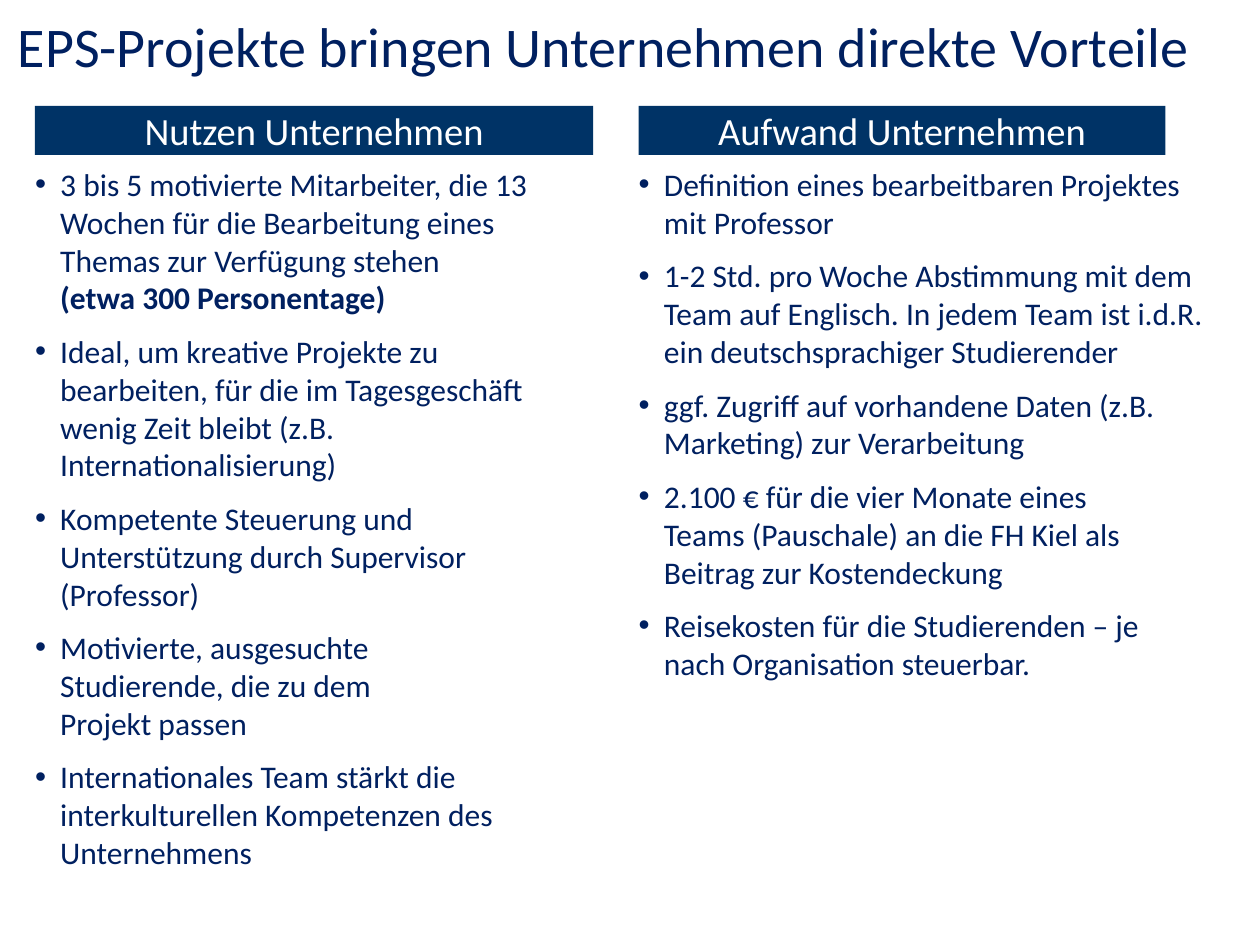
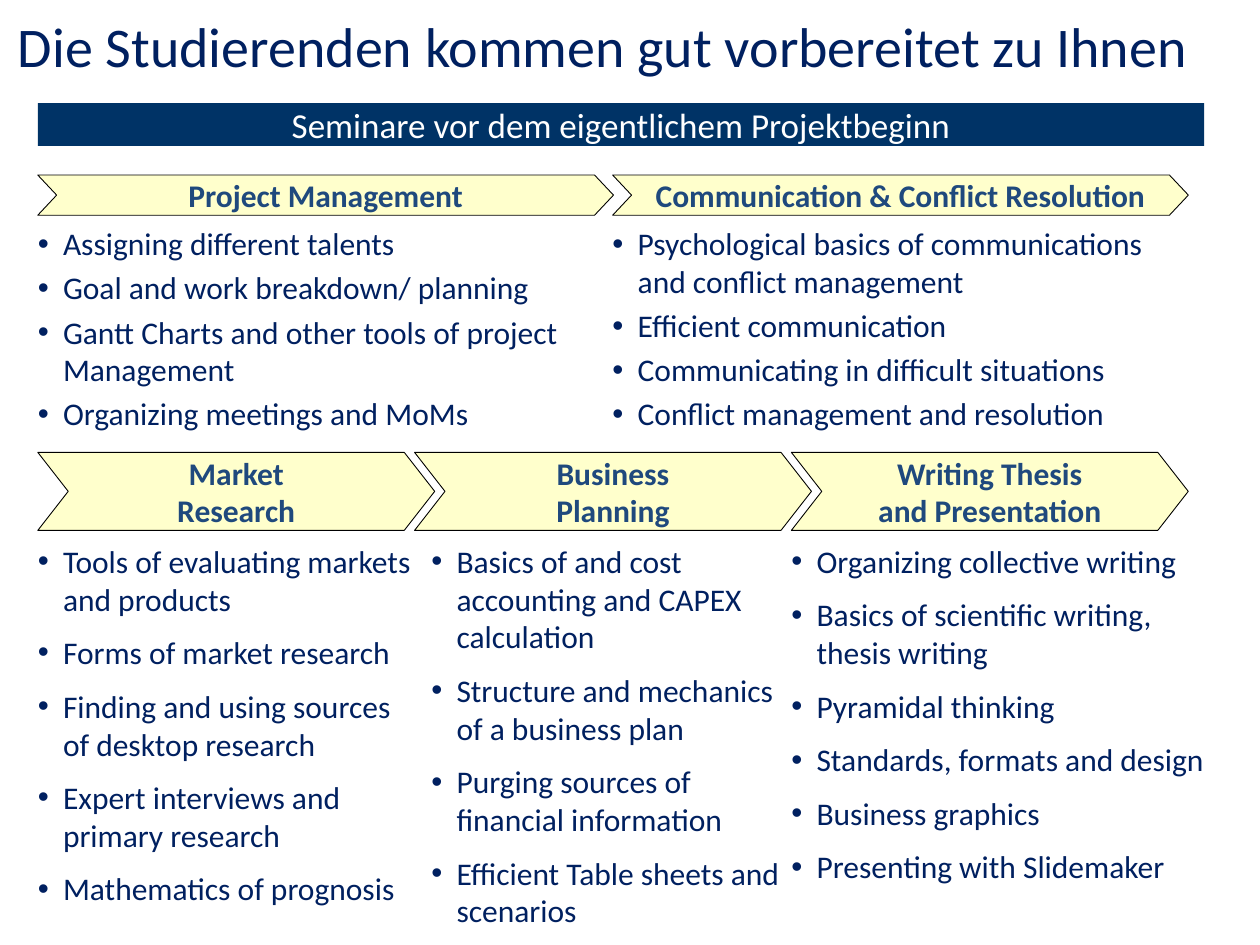
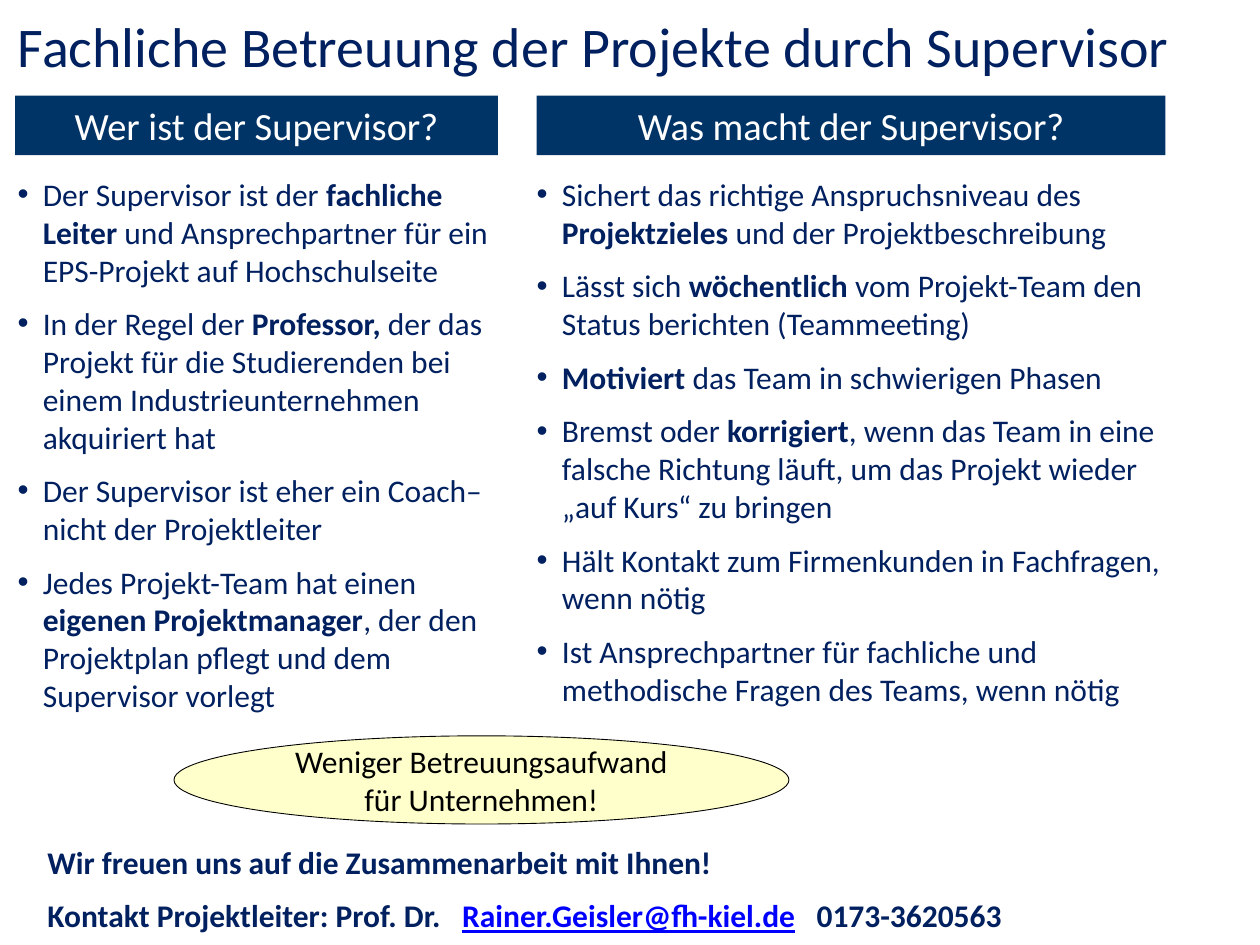
"""Build three slides on company projects with students."""
from copy import deepcopy

from lxml.etree import SubElement
from pptx import Presentation
from pptx.dml.color import RGBColor
from pptx.enum.shapes import MSO_SHAPE as Preset
from pptx.enum.text import MSO_ANCHOR as Anchor, MSO_AUTO_SIZE as Fit, PP_ALIGN as Align
from pptx.oxml.ns import qn
from pptx.util import Pt

COLORS = {"text": "002060", "band": "003366", "white": "FFFFFF", "cream": "FFFFCC",
          "step": "1F497D", "black": "000000", "mail": "0000FF"}
FONT = "Calibri"
TITLE = {"size": 32, "color": "text"}
BODY = {"size": 18, "color": "text"}
CLOSING = {"size": 18, "color": "text", "bold": True}
BAND = {"size": 22, "color": "white", "fill": "band"}
SLIM_BAND = BAND | {"size": 20}
STEP = {"size": 18, "color": "step", "bold": True, "fill": "cream", "line": True}
NOTE = STEP | {"color": "black", "bold": False}
NO_INSET = {"margin_left": 0, "margin_top": 0, "margin_right": 0, "margin_bottom": 0}
LABEL_FRAME = NO_INSET | {"word_wrap": False, "vertical_anchor": Anchor.MIDDLE}
LIST_FRAME = NO_INSET | {"word_wrap": True, "vertical_anchor": Anchor.TOP,
                         "auto_size": Fit.NONE}
TITLE_FRAME = {"word_wrap": True, "vertical_anchor": Anchor.MIDDLE, "auto_size": Fit.NONE}


def place(box, spot, frame_format):
    """Move a box to its spot in points and format its text frame."""
    for side, length in zip(("left", "top", "width", "height"), spot):
        setattr(box, side, Pt(length))
    for name, value in frame_format.items():
        setattr(box.text_frame, name, value)
    return box.text_frame


def write(frame, items, look, align=Align.LEFT, gap=0, bullet=False, tabs=()):
    """Write one paragraph per item, with ** around bold words."""
    for number, item in enumerate(items):
        para = frame.add_paragraph() if number else frame.paragraphs[0]
        para.alignment = align
        para.space_before = Pt(gap if number else 0)
        props = para._p.get_or_add_pPr()
        if bullet:
            props.set("marL", str(Pt(14.4)))
            props.set("indent", str(-Pt(14.4)))
            SubElement(props, qn("a:buFont"), typeface="Arial")
            SubElement(props, qn("a:buChar"), char="•")
        if tabs:
            stops = SubElement(props, qn("a:tabLst"))
            for stop in tabs:
                SubElement(stops, qn("a:tab"), pos=str(Pt(stop)), algn="l")
        for turn, chunk in enumerate(item.split("**")):
            for row, piece in enumerate(chunk.split("\n")):
                if row:
                    para.add_line_break()
                    para._p[-1].append(deepcopy(span._r.rPr))
                if not piece:
                    continue
                span = para.add_run()
                span.text = piece
                font = {"name": FONT, "size": Pt(look["size"]),
                        "bold": look.get("bold", False) or turn % 2 == 1}
                for name, value in font.items():
                    setattr(span.font, name, value)
                span.font.color.rgb = RGBColor.from_string(COLORS[look["color"]])


STEP_LEFT = 21.6
top_steps = [(Preset.CHEVRON, (STEP_LEFT + 328.5 * column, 100, 329, 23), text, STEP, 0.47)
             for column, text in enumerate(["Project Management",
                                            "Communication & Conflict Resolution"])]
low_steps = [(Preset.CHEVRON, (STEP_LEFT + 215.3 * column, 258.5, 226.8, 44.6), text, STEP, 0.39)
             for column, text in enumerate(["Market\nResearch", "Business\nPlanning",
                                            "Writing Thesis\nand Presentation"])]

PAGES = [
    {"title": "EPS-Projekte bringen Unternehmen direkte Vorteile",
     "labels": [
         (Preset.RECTANGLE, (20, 60.5, 319, 28), "Nutzen Unternehmen", BAND, None),
         (Preset.RECTANGLE, (365, 60.5, 301, 28), "Aufwand Unternehmen", BAND, None)],
     "lists": [
         ((20, 94.3, 317.5, 414), 9, [
             "3 bis 5 motivierte Mitarbeiter, die 13 Wochen für die Bearbeitung eines Themas "
             "zur Verfügung stehen\n**(etwa 300 Personentage)**",
             "Ideal, um kreative Projekte zu bearbeiten, für die im Tagesgeschäft wenig Zeit "
             "bleibt (z.B. Internationalisierung)",
             "Kompetente Steuerung und Unterstützung durch Supervisor (Professor)",
             "Motivierte, ausgesuchte\nStudierende, die zu dem\nProjekt passen",
             "Internationales Team stärkt die interkulturellen Kompetenzen des Unternehmens"]),
         ((365, 94.3, 325, 312), 9, [
             "Definition eines bearbeitbaren Projektes mit Professor",
             "1-2 Std. pro Woche Abstimmung mit dem Team auf Englisch. In jedem Team ist "
             "i.d.R. ein deutschsprachiger Studierender",
             "ggf. Zugriff auf vorhandene Daten (z.B. Marketing) zur Verarbeitung",
             "2.100 € für die vier Monate eines\nTeams (Pauschale) an die FH Kiel als "
             "Beitrag zur Kostendeckung",
             "Reisekosten für die Studierenden – je nach Organisation steuerbar."])]},
    {"title": "Die Studierenden kommen gut vorbereitet zu Ihnen",
     "labels": [
         (Preset.RECTANGLE, (STEP_LEFT, 59, 666.5, 24.4),
          "Seminare vor dem eigentlichem Projektbeginn", SLIM_BAND, None),
         *top_steps, *low_steps],
     "lists": [
         ((STEP_LEFT, 128.2, 317.5, 124.5), 3.6, [
             "Assigning different talents",
             "Goal and work breakdown/ planning",
             "Gantt Charts and other tools of project Management",
             "Organizing meetings and MoMs"]),
         ((350, 128.2, 317.5, 124.5), 3.6, [
             "Psychological basics of communications and conflict management",
             "Efficient communication",
             "Communicating in difficult situations",
             "Conflict management and resolution"]),
         ((STEP_LEFT, 309.6, 215.3, 219), 9, [
             "Tools of evaluating markets and products",
             "Forms of market research",
             "Finding and using sources of desktop research",
             "Expert interviews and primary research",
             "Mathematics of prognosis"]),
         ((246.5, 309.6, 204.5, 219), 9, [
             "Basics of and cost accounting and CAPEX calculation",
             "Structure and mechanics of a business plan",
             "Purging sources of financial information",
             "Efficient Table sheets and scenarios"]),
         ((452.2, 309.6, 248, 219), 9, [
             "Organizing collective writing",
             "Basics of scientific writing, thesis writing",
             "Pyramidal thinking",
             "Standards, formats and design",
             "Business graphics",
             "Presenting with Slidemaker"])]},
    {"title": "Fachliche Betreuung der Projekte durch Supervisor",
     "labels": [
         (Preset.RECTANGLE, (8.6, 54.7, 276, 34), "Wer ist der Supervisor?", BAND, None),
         (Preset.RECTANGLE, (306.7, 54.7, 359.3, 34), "Was macht der Supervisor?", BAND, None),
         (Preset.OVAL, (99.4, 420.5, 351.4, 50.4),
          "Weniger Betreuungsaufwand\nfür Unternehmen!", NOTE, None)],
     "lists": [
         ((10.1, 100, 279.5, 346), 9, [
             "Der Supervisor ist der **fachliche Leiter** und Ansprechpartner für ein "
             "EPS-Projekt auf Hochschulseite",
             "In der Regel der **Professor,** der das Projekt für die Studierenden bei einem "
             "Industrieunternehmen akquiriert hat",
             "Der Supervisor ist eher ein Coach– nicht der Projektleiter",
             "Jedes Projekt-Team hat einen **eigenen Projektmanager**, der den Projektplan "
             "pflegt und dem Supervisor vorlegt"]),
         ((306.7, 100, 368.6, 346), 9, [
             "Sichert das richtige Anspruchsniveau des **Projektzieles** und der "
             "Projektbeschreibung",
             "Lässt sich **wöchentlich** vom Projekt-Team den Status berichten (Teammeeting)",
             "**Motiviert** das Team in schwierigen Phasen",
             "Bremst oder **korrigiert**, wenn das Team in eine falsche Richtung läuft, um "
             "das Projekt wieder „auf Kurs“ zu bringen",
             "Hält Kontakt zum Firmenkunden in Fachfragen, wenn nötig",
             "Ist Ansprechpartner für fachliche und methodische Fragen des Teams, "
             "wenn nötig"])]},
]

deck = Presentation()
deck.slide_width, deck.slide_height = Pt(720), Pt(540)
two_lists = deck.slide_layouts[3]

for content in PAGES:
    page = deck.slides.add_slide(two_lists)
    title, *bodies = page.placeholders
    bodies = [body for body in bodies if body.placeholder_format.idx in (1, 2)]
    write(place(title, (3, -19, 708.5, 90), TITLE_FRAME), [content["title"]], TITLE)

    for number, (spot, gap, items) in enumerate(content["lists"]):
        box = bodies[number] if number < len(bodies) else page.shapes.add_textbox(0, 0, 0, 0)
        write(place(box, spot, LIST_FRAME), items, BODY, gap=gap, bullet=True)

    for preset, spot, text, look, notch in content["labels"]:
        label = page.shapes.add_shape(preset, 0, 0, 0, 0)
        label.shadow.inherit = False
        label.fill.solid()
        label.fill.fore_color.rgb = RGBColor.from_string(COLORS[look["fill"]])
        if look.get("line"):
            label.line.color.rgb = RGBColor.from_string(COLORS["black"])
            label.line.width = Pt(0.5)
        else:
            label.line.fill.background()
        if notch:
            label.adjustments[0] = notch
        write(place(label, spot, LABEL_FRAME), [text], look, Align.CENTER)

contact = page.shapes.add_textbox(0, 0, 0, 0)
frame = place(contact, (20, 478, 599, 62), {"word_wrap": True})
write(frame, ["Wir freuen uns auf die Zusammenarbeit mit Ihnen!",
              "Kontakt Projektleiter: Prof. Dr.\t**Rainer.Geisler@fh-kiel.de**\t0173-3620563"],
      CLOSING, gap=9, tabs=(237, 439.5))
mail = frame.paragraphs[1].runs[1]
mail.font.underline = True
mail.font.color.rgb = RGBColor.from_string(COLORS["mail"])

deck.save("out.pptx")
